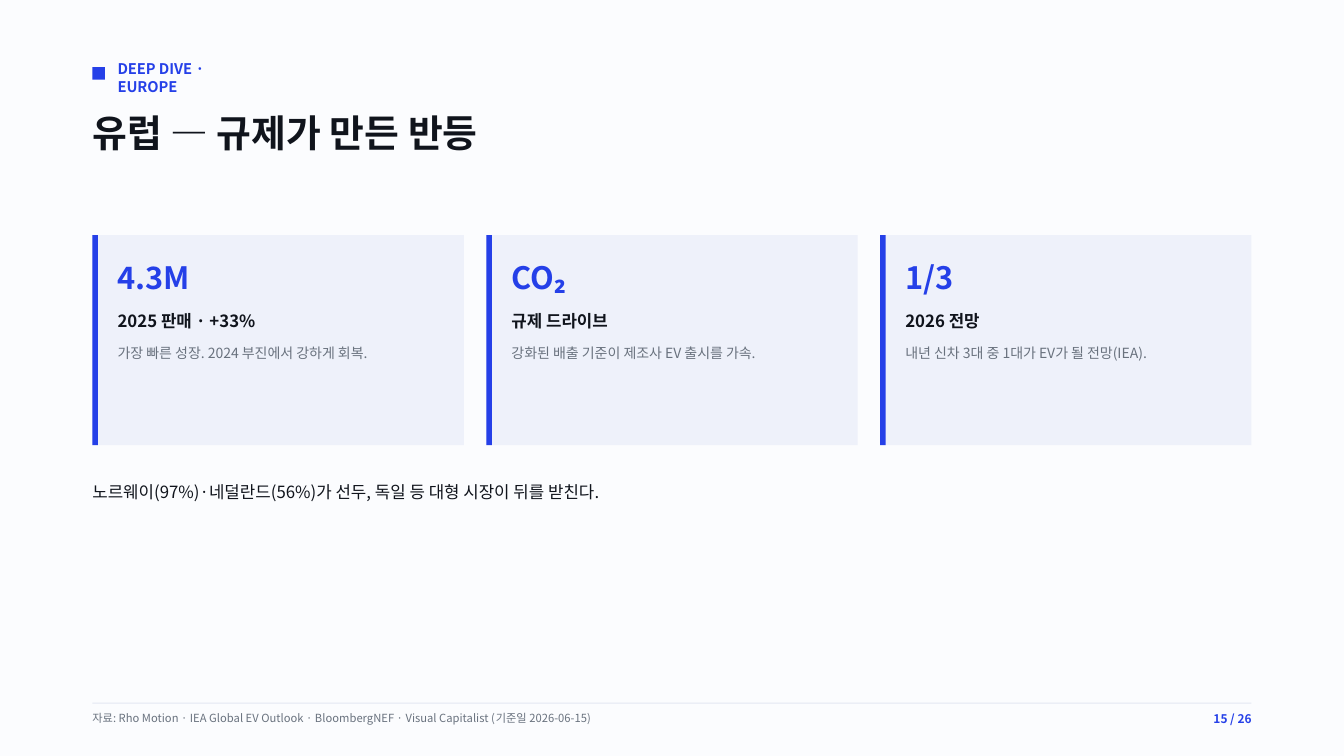
import dataclasses

import lxml.etree
import pptx
import pptx.dml.color
import pptx.enum.shapes
import pptx.enum.text
import pptx.oxml.ns
import pptx.util

Pt = pptx.util.Pt
ALIGN = pptx.enum.text.PP_ALIGN


@dataclasses.dataclass(frozen=True)
class Theme:
    font: str = "Noto Sans CJK KR"
    paper: str = "FBFCFE"
    accent: str = "2540E8"
    ink: str = "10141C"
    muted: str = "69727E"
    panel: str = "EEF1FA"
    rule: str = "E3E8F2"
    title: float = 27
    figure: float = 22
    body: float = 12
    eyebrow: float = 10.5
    detail: float = 10
    page: float = 8.5
    source: float = 8


theme = Theme()
deck = pptx.Presentation()
deck.slide_width, deck.slide_height = Pt(960), Pt(540)
slide = deck.slides.add_slide(deck.slide_layouts[5])
slide.background.fill.solid()
slide.background.fill.fore_color.rgb = pptx.dml.color.RGBColor.from_string(theme.paper)


def write(text, *, at, size, color=theme.ink, bold=False, align=ALIGN.LEFT, holder=None):
    box = holder or slide.shapes.add_textbox(0, 0, 0, 0)
    box.left, box.top, box.width, box.height = map(Pt, at)
    frame = box.text_frame
    frame.margin_left = frame.margin_top = frame.margin_right = frame.margin_bottom = 0
    frame.word_wrap = True
    frame.auto_size = pptx.enum.text.MSO_AUTO_SIZE.SHAPE_TO_FIT_TEXT
    frame.vertical_anchor = pptx.enum.text.MSO_ANCHOR.TOP
    paragraph = frame.paragraphs[0]
    paragraph.alignment = align
    run = paragraph.add_run()
    run.text = text
    run.font.size = Pt(size)
    run.font.bold = bold
    run.font.name = theme.font
    run.font.color.rgb = pptx.dml.color.RGBColor.from_string(color)
    east_asian = lxml.etree.SubElement(run.font._element, pptx.oxml.ns.qn("a:ea"))
    east_asian.set("typeface", theme.font)


def block(left, top, width, height, color):
    shape = slide.shapes.add_shape(
        pptx.enum.shapes.MSO_SHAPE.RECTANGLE, Pt(left), Pt(top), Pt(width), Pt(height)
    )
    shape.shadow.inherit = False
    shape.fill.solid()
    shape.fill.fore_color.rgb = pptx.dml.color.RGBColor.from_string(color)
    shape.line.fill.background()


margin, content_width = 66, 828
inset = 18

block(margin, 48, 9, 9, theme.accent)
write("DEEP DIVE · EUROPE", at=(margin + inset, 43, 100, 13),
      size=theme.eyebrow, color=theme.accent, bold=True)
write("유럽 — 규제가 만든 반등", at=(margin, 78, content_width, 32.4),
      size=theme.title, bold=True, holder=slide.shapes.title)

cards = [
    ("4.3M", "2025 판매 · +33%", "가장 빠른 성장. 2024 부진에서 강하게 회복."),
    ("CO₂", "규제 드라이브", "강화된 배출 기준이 제조사 EV 출시를 가속."),
    ("1/3", "2026 전망", "내년 신차 3대 중 1대가 EV가 될 전망(IEA)."),
]
card_top, card_height, card_gap = 168, 150, 16
card_width = (content_width - card_gap * (len(cards) - 1)) / len(cards)
text_width = card_width - 32

for index, (figure, heading, detail) in enumerate(cards):
    card_left = margin + index * (card_width + card_gap)
    text_left = card_left + inset
    block(card_left, card_top, card_width, card_height, theme.panel)
    block(card_left, card_top, 4, card_height, theme.accent)
    write(figure, at=(text_left, 184.5, text_width, 26.4),
          size=theme.figure, color=theme.accent, bold=True)
    write(heading, at=(text_left, 222, text_width, 14.4), size=theme.body, bold=True)
    write(detail, at=(text_left, 246, text_width, 12), size=theme.detail, color=theme.muted)

write("노르웨이(97%)·네덜란드(56%)가 선두, 독일 등 대형 시장이 뒤를 받친다.",
      at=(margin, 344, content_width, 14.4), size=theme.body)

block(margin, 502, content_width, 0.75, theme.rule)
write("자료: Rho Motion · IEA Global EV Outlook · BloombergNEF · Visual Capitalist (기준일 2026-06-15)",
      at=(margin, 508, 768, 9.6), size=theme.source, color=theme.muted)
write("15 / 26", at=(834, 508, 60, 10.2),
      size=theme.page, color=theme.accent, bold=True, align=ALIGN.RIGHT)

deck.save("out.pptx")
